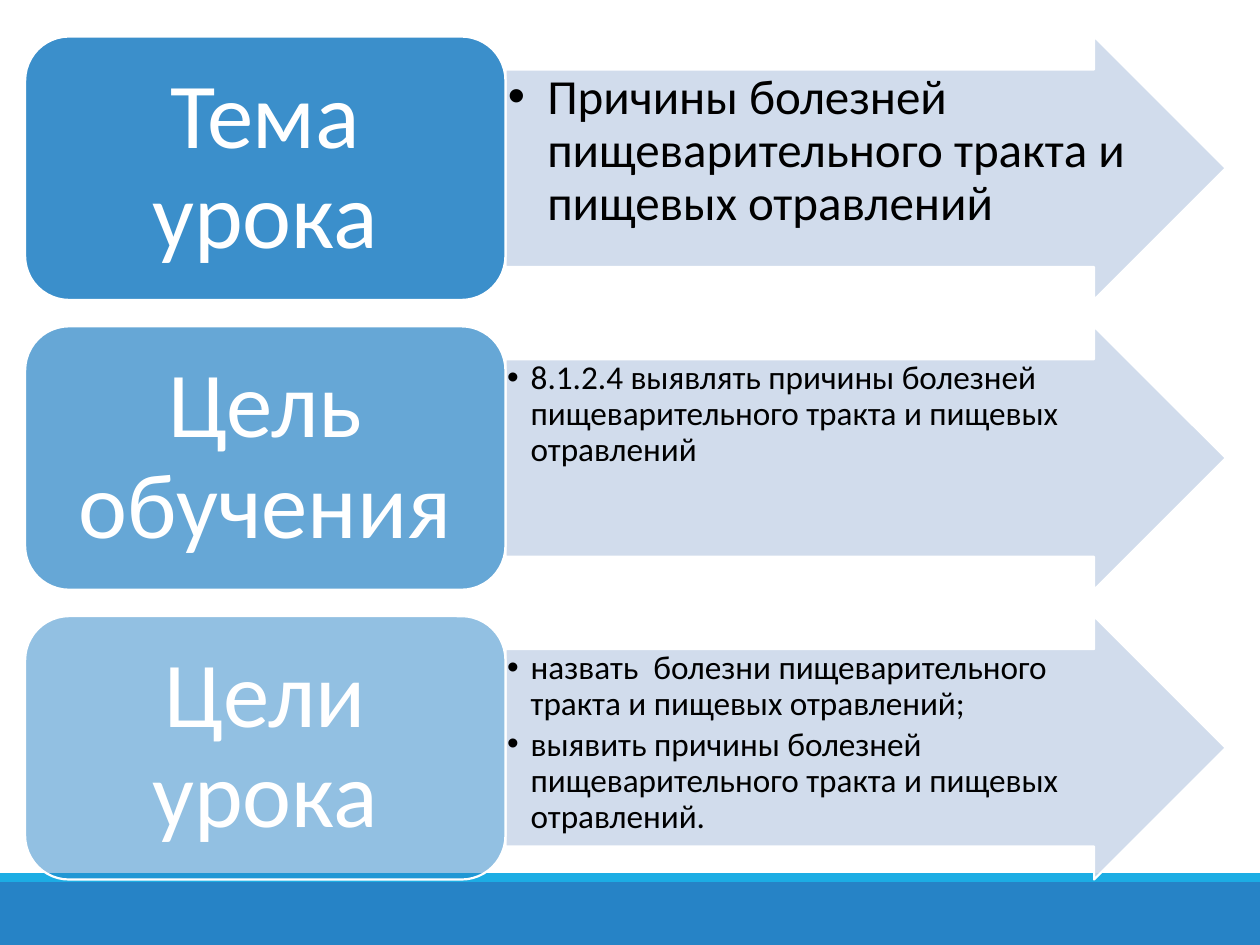
from lxml import etree
from pptx import Presentation
from pptx.dml.color import RGBColor
from pptx.enum.shapes import MSO_SHAPE
from pptx.enum.text import MSO_ANCHOR, PP_ALIGN
from pptx.oxml.ns import qn
from pptx.util import Pt

RECTANGLE = MSO_SHAPE.RECTANGLE
ROUNDED = MSO_SHAPE.ROUNDED_RECTANGLE
ARROW = MSO_SHAPE.RIGHT_ARROW
LEFT, CENTER = PP_ALIGN.LEFT, PP_ALIGN.CENTER
TOP, MIDDLE = MSO_ANCHOR.TOP, MSO_ANCHOR.MIDDLE

FONT = "Calibri"
COLORS = {
    "blue": "2683C6",
    "cyan": "1CADE4",
    "pale": "CDD9EA",
    "white": "FFFFFF",
    "black": "000000",
}
SLIDE_WIDTH, SLIDE_HEIGHT = 720, 540
ROW_LEFT, ROW_TOP = 14.4, 20.9
ROW_WIDTH, ROW_HEIGHT, ROW_PITCH = 686.1, 150.5, 165.6
LABEL_SHARE = 0.4

# label, label opacity, points, text size, hanging indent, inset
ROWS = [
    ("Тема урока", 90,
     ["Причины болезней пищеварительного тракта и пищевых отравлений"],
     28, 22.5, 1.4),
    ("Цель обучения", 70,
     ["8.1.2.4 выявлять причины болезней пищеварительного тракта и пищевых отравлений"],
     19, 13.5, 0.95),
    ("Цели урока", 50,
     ["назвать  болезни пищеварительного тракта и пищевых отравлений;",
      "выявить причины болезней пищеварительного тракта и пищевых отравлений."],
     19, 13.5, 0.95),
]


def add_block(slide, kind, box, color, opacity=100, outlined=False):
    shape = slide.shapes.add_shape(kind, *(Pt(length) for length in box))
    shape.shadow.inherit = False
    shape.fill.solid()
    shape.fill.fore_color.rgb = RGBColor.from_string(COLORS[color])
    if opacity < 100:
        fill_color = shape.fill._xPr.find(qn("a:solidFill"))[0]
        etree.SubElement(fill_color, qn("a:alpha"), val=str(opacity * 1000))
    if outlined:
        shape.line.color.rgb = RGBColor.from_string(COLORS["white"])
        shape.line.width = Pt(1.25)
    else:
        shape.line.fill.background()
    return shape


def write_text(shape, texts, *, size, color, align=LEFT, anchor=TOP,
               insets=(0, 0), indent=0, space_after=0):
    frame = shape.text_frame
    frame.word_wrap = True
    frame.vertical_anchor = anchor
    frame.margin_left = frame.margin_right = Pt(insets[0])
    frame.margin_top = frame.margin_bottom = Pt(insets[1])
    for index, text in enumerate(texts):
        paragraph = frame.add_paragraph() if index else frame.paragraphs[0]
        paragraph.text = text
        paragraph.alignment = align
        paragraph.line_spacing = 0.9
        paragraph.space_after = Pt(space_after)
        if indent:
            properties = paragraph._p.get_or_add_pPr()
            properties.set("marL", str(Pt(indent)))
            properties.set("indent", str(Pt(-indent)))
            etree.SubElement(properties, qn("a:buFont"), typeface="Arial")
            etree.SubElement(properties, qn("a:buChar"), char="•")
        paragraph.font.name = FONT
        paragraph.font.size = Pt(size)
        paragraph.font.color.rgb = RGBColor.from_string(COLORS[color])


def add_footer_bands(slide, box):
    left, top, width, height = box
    stripe = 5
    add_block(slide, RECTANGLE, (left, top + stripe, width, height - stripe), "blue")
    add_block(slide, RECTANGLE, (left, top, width, stripe), "cyan")


def add_row(slide, box, label, opacity, points, size, indent, inset):
    left, top, width, height = box
    label_width = width * LABEL_SHARE

    # Arrow with the bulleted points
    arrow = add_block(slide, ARROW,
                      (left + label_width, top, width - label_width, height),
                      "pale", 90, outlined=True)
    arrow.adjustments[0], arrow.adjustments[1] = 0.75, 0.5
    write_text(arrow, points, size=size, color="black", insets=(inset, inset),
               indent=indent, space_after=size * 0.15)

    # Rounded label
    block = add_block(slide, ROUNDED, (left, top, label_width, height),
                      "blue", opacity, outlined=True)
    write_text(block, [label], size=53, color="white", align=CENTER,
               anchor=MIDDLE, insets=(15.9, 7.95))


def main():
    presentation = Presentation()
    presentation.slide_width = Pt(SLIDE_WIDTH)
    presentation.slide_height = Pt(SLIDE_HEIGHT)
    slide = presentation.slides.add_slide(presentation.slide_layouts[6])

    add_footer_bands(slide, (0, 499, SLIDE_WIDTH, 41))
    for index, row in enumerate(ROWS):
        box = (ROW_LEFT, ROW_TOP + index * ROW_PITCH, ROW_WIDTH, ROW_HEIGHT)
        add_row(slide, box, *row)

    presentation.save("out.pptx")


if __name__ == "__main__":
    main()
